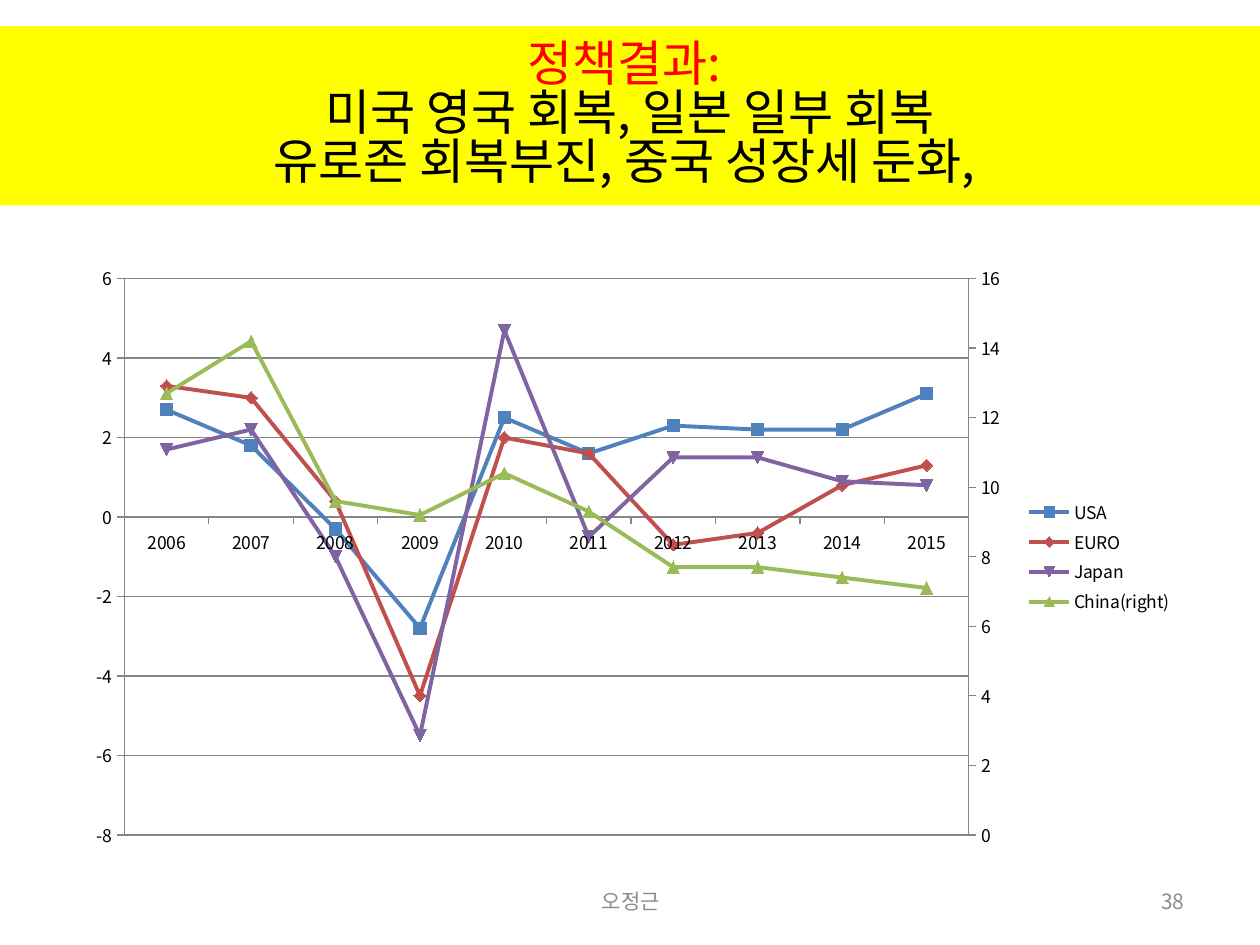
from copy import deepcopy

from lxml import etree
from pptx import Presentation, chart as charts
from pptx import util as u
from pptx.chart import data as chart_data
from pptx.dml import color
from pptx.enum import chart as chart_enum, shapes, text
from pptx.oxml import ns, parse_xml

FONT = "Noto Sans CJK KR"
COLOURS = {
    "banner": "FFFF00", "heading": "FF0000", "ink": "000000",
    "footer": "8C8C8C", "axis": "868686",
    "USA": "4F81BD", "EURO": "C0504D", "Japan": "8064A2",
    "China(right)": "9BBB59",
}
YEARS = [str(year) for year in range(2006, 2016)]
GROWTH = {
    "USA": [2.7, 1.8, -0.3, -2.8, 2.5, 1.6, 2.3, 2.2, 2.2, 3.1],
    "EURO": [3.3, 3, 0.4, -4.5, 2, 1.6, -0.7, -0.4, 0.8, 1.3],
    "Japan": [1.7, 2.2, -1, -5.5, 4.7, -0.5, 1.5, 1.5, 0.9, 0.8],
    "China(right)": [12.7, 14.2, 9.6, 9.2, 10.4, 9.3, 7.7, 7.7, 7.4, 7.1],
}


class SlideBuilder:
    """Holds the style and the slide being filled."""

    def __init__(self, page):
        self.page = page

    def colour(self, name):
        return color.RGBColor.from_string(COLOURS[name])

    def frame(self, shape, align):
        frame = shape.text_frame
        frame.word_wrap = True
        frame.vertical_anchor = text.MSO_ANCHOR.MIDDLE
        para = frame.paragraphs[0]
        para.alignment = align
        return para

    def style(self, para, size):
        para.font.size = u.Pt(size)
        para.font.name = FONT
        for span in para.runs:
            span.font.size = u.Pt(size)
            span.font.name = FONT
            east_asian = etree.SubElement(span.font._element, ns.qn("a:ea"))
            east_asian.set("typeface", FONT)

    def banner(self, left, top, width, height, lines, size):
        box = self.page.shapes.add_shape(
            shapes.MSO_SHAPE.RECTANGLE, u.Cm(left), u.Cm(top), u.Cm(width), u.Cm(height))
        box.shadow.inherit = False
        box.fill.solid()
        box.fill.fore_color.rgb = self.colour("banner")
        box.line.fill.background()
        para = self.frame(box, text.PP_ALIGN.CENTER)
        para.line_spacing = 0.83
        for index, (words, name) in enumerate(lines):
            if index:
                para.add_line_break()
            span = para.add_run()
            span.text = words
            span.font.color.rgb = self.colour(name)
        self.style(para, size)

    def label(self, left, top, width, height, words, align):
        box = self.page.shapes.add_textbox(u.Cm(left), u.Cm(top), u.Cm(width), u.Cm(height))
        para = self.frame(box, align)
        para.add_run().text = words
        self.style(para, 12)
        para.font.color.rgb = para.runs[0].font.color.rgb = self.colour("footer")

    def line_chart(self, left, top, width, height, categories, series):
        data = chart_data.CategoryChartData()
        data.categories = categories
        for name, values in series.items():
            data.add_series(name, values)
        chart = self.page.shapes.add_chart(
            chart_enum.XL_CHART_TYPE.LINE_MARKERS,
            u.Cm(left), u.Cm(top), u.Cm(width), u.Cm(height), data).chart
        chart.has_title = False
        chart.font.size = u.Pt(10)
        chart.font.name = FONT
        chart.font.color.rgb = self.colour("ink")
        chart.has_legend = True
        chart.legend.position = chart_enum.XL_LEGEND_POSITION.RIGHT
        chart.legend.include_in_layout = False

        for line in chart.plots[0].series:
            line.smooth = False
            line.format.line.width = u.Pt(2.25)
            line.format.line.color.rgb = self.colour(line.name)
            line.marker.size = 7
            line.marker.format.fill.solid()
            line.marker.format.fill.fore_color.rgb = self.colour(line.name)
            line.marker.format.line.color.rgb = self.colour(line.name)

        value_axis = chart.value_axis
        value_axis.minimum_scale, value_axis.maximum_scale = -8, 6
        value_axis.major_unit = 2
        value_axis.has_major_gridlines = True
        value_axis.major_gridlines.format.line.color.rgb = self.colour("axis")
        for axis in (chart.category_axis, value_axis):
            axis.major_tick_mark = chart_enum.XL_TICK_MARK.OUTSIDE
            axis.format.line.color.rgb = self.colour("axis")
        value_axis.tick_labels.number_format = "General"
        value_axis.tick_labels.number_format_is_linked = False
        return chart

    def right_axis(self, chart, low, high):
        """Move the last series to a second value axis on the right."""
        first = chart.plots[0]._element
        second = deepcopy(first)
        first.addnext(second)
        first.remove(first.findall(ns.qn("c:ser"))[-1])
        for line in second.findall(ns.qn("c:ser"))[:-1]:
            second.remove(line)

        category, value = chart.category_axis._element, chart.value_axis._element
        new_category, new_value = deepcopy(category), deepcopy(value)
        value.addnext(new_value)
        new_value.addnext(new_category)
        ids = {axis.find(ns.qn("c:axId")).get("val"): number
               for axis, number in ((category, "5001"), (value, "5002"))}
        for part in (second, new_category, new_value):
            for tag in ("c:axId", "c:crossAx"):
                for node in part.findall(ns.qn(tag)):
                    node.set("val", ids[node.get("val")])

        new_category.find(ns.qn("c:delete")).set("val", "1")
        new_value.remove(new_value.find(ns.qn("c:majorGridlines")))
        settings = {"c:axPos": "r", "c:crosses": "max",
                    "c:scaling/c:min": str(low), "c:scaling/c:max": str(high)}
        for tag, setting in settings.items():
            steps = "/".join(ns.qn(step) for step in tag.split("/"))
            new_value.find(steps).set("val", setting)

    def plot_area(self, chart, **place):
        """Fix the inner plot area, in fractions of the chart."""
        area = chart.plots[0]._element.getparent()
        for old in area.findall(ns.qn("c:layout")):
            area.remove(old)
        modes = '<c:xMode val="edge"/><c:yMode val="edge"/>'
        sizes = "".join(f'<c:{key} val="{value}"/>' for key, value in place.items())
        area.insert(0, parse_xml(
            f'<c:layout {ns.nsdecls("c")}><c:manualLayout>'
            f'<c:layoutTarget val="inner"/>{modes}{sizes}</c:manualLayout></c:layout>'))


def main():
    deck = Presentation()
    deck.slide_width, deck.slide_height = u.Cm(25.4), u.Cm(19.05)
    builder = SlideBuilder(deck.slides.add_slide(deck.slide_layouts[6]))

    # Title banner
    builder.banner(0, 0.53, 25.4, 3.61, [
        ("정책결과: ", "heading"),
        (" 미국 영국 회복, 일본 일부 회복 ", "ink"),
        ("유로존 회복부진, 중국 성장세 둔화, ", "ink"),
    ], 28)

    # Footer and page number
    builder.label(8.69, 17.65, 8.05, 1.02, "오정근", text.PP_ALIGN.CENTER)
    builder.label(18.21, 17.65, 5.92, 1.02, "38", text.PP_ALIGN.RIGHT)

    # Growth rates, with China on the right axis
    chart = builder.line_chart(1.5, 5.13, 22.4, 12.19, YEARS, GROWTH)
    builder.right_axis(chart, 0, 16)
    builder.plot_area(chart, x=0.045, y=0.04, w=0.76, h=0.92)

    deck.save("out.pptx")


if __name__ == "__main__":
    main()
